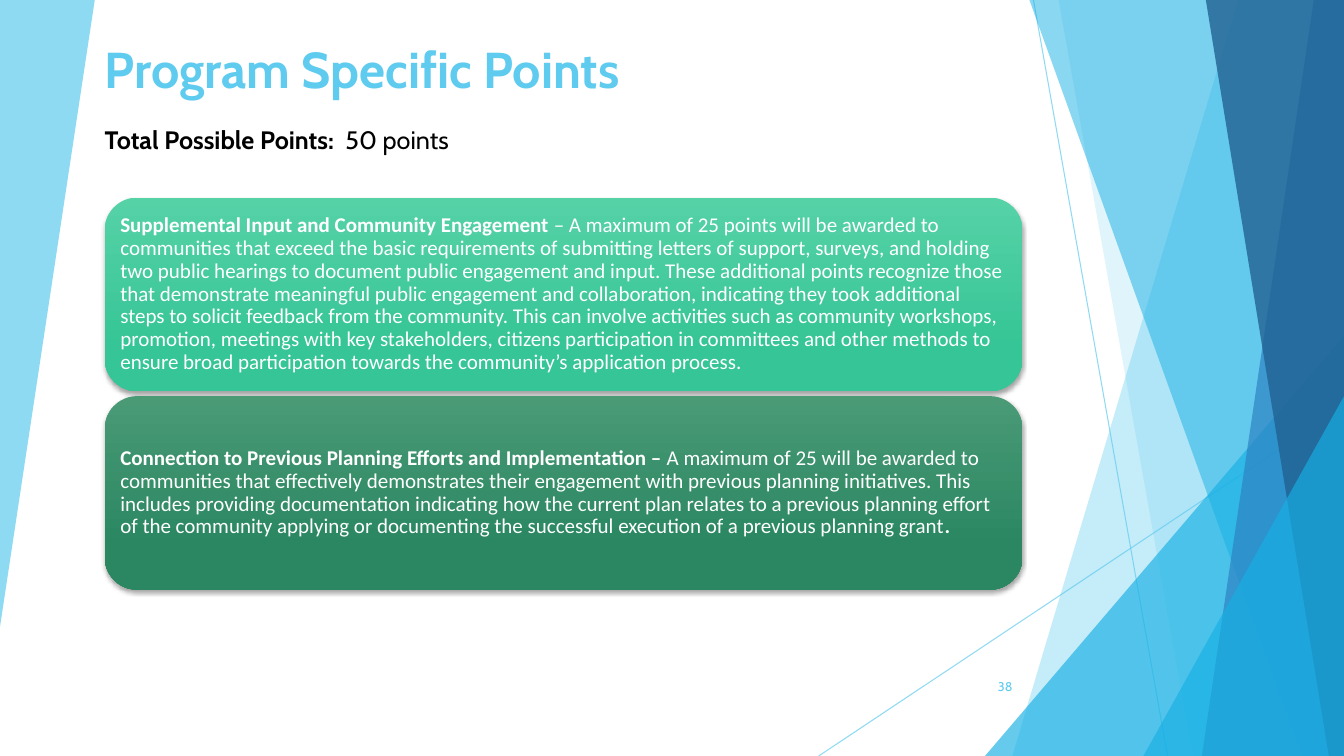
from dataclasses import dataclass

from lxml.etree import SubElement
from pptx import Presentation
from pptx.dml.color import RGBColor
from pptx.enum.shapes import MSO_CONNECTOR, MSO_SHAPE
from pptx.enum.text import MSO_ANCHOR, PP_ALIGN
from pptx.oxml.ns import qn
from pptx.util import Inches, Pt

WIDTH, HEIGHT = 13.33, 7.5


@dataclass(frozen=True)
class Theme:
    sky: str = "5FCBEF"
    azure: str = "17B0E4"
    blue: str = "2E83C3"
    navy: str = "226292"
    black: str = "000000"
    white: str = "FFFFFF"
    heading_font: str = "Cabin"
    body_font: str = "Calibri"
    title_size: float = 36
    subtitle_size: float = 18
    body_size: float = 15
    number_size: float = 9


@dataclass(frozen=True)
class Facet:
    points: tuple[tuple[float, float], ...]
    color: str
    opacity: int


@dataclass(frozen=True)
class Corner:
    """Right triangle in the lower right corner of the slide."""
    left: float
    top: float
    color: str
    opacity: int


@dataclass(frozen=True)
class Ray:
    start: tuple[float, float]
    end: tuple[float, float]
    color: str
    opacity: int


@dataclass(frozen=True)
class Span:
    text: str
    bold: bool = False


@dataclass(frozen=True)
class Card:
    colors: tuple[str, str]
    spans: tuple[Span, ...]


THEME = Theme()


def right_facet(top_left: float, bottom_left: float, color: str, opacity: int) -> Facet:
    """Facet reaching from a slanted left edge to the right slide edge."""
    points = ((top_left, 0), (WIDTH, 0), (WIDTH, HEIGHT), (bottom_left, HEIGHT))
    return Facet(points, color, opacity)


# Background decoration, from back to front
DECORATION = (
    Facet(((0, 0), (0.94, 0), (0, 6.22)), THEME.sky, 70),
    Ray((10.25, 0), (11.58, HEIGHT), THEME.sky, 70),
    Ray((WIDTH, 4.03), (8.12, HEIGHT), THEME.sky, 70),
    right_facet(12.28, 10.04, THEME.sky, 36),
    right_facet(10.5, 11.83, THEME.sky, 20),
    Corner(9.77, 3.33, THEME.azure, 66),
    right_facet(10.21, 12.91, THEME.azure, 50),
    right_facet(13.03, 11.92, THEME.blue, 70),
    right_facet(11.96, 13.18, THEME.navy, 80),
    Corner(11.34, 3.93, THEME.azure, 66),
)

CARDS = (
    Card(("56D2A7", "36C596"), (
        Span("Supplemental Input and Community Engagement", True),
        Span(" – A maximum of 25 points will be awarded to communities that exceed the basic "
             "requirements of submitting letters of support, surveys, and holding two public "
             "hearings to document public engagement and input. These additional points "
             "recognize those that demonstrate meaningful public engagement and collaboration, "
             "indicating they took additional steps to solicit feedback from the community. "
             "This can involve activities such as community workshops, promotion, meetings with "
             "key stakeholders, citizens participation in committees and other methods to ensure "
             "broad participation towards the community’s application process."),
    )),
    Card(("4A9A76", "2A8762"), (
        Span("Connection to Previous Planning Efforts and Implementation –", True),
        Span(" A maximum of 25 will be awarded to communities that effectively demonstrates "
             "their engagement with previous planning initiatives. This includes providing "
             "documentation indicating how the current plan relates to a previous planning "
             "effort of the community applying or documenting the successful execution of a "
             "previous planning grant"),
        Span(".", True),
    )),
)


def set_opacity(shape, opacity: int) -> None:
    for color in shape.element.spPr.iter(qn("a:srgbClr")):
        SubElement(color, qn("a:alpha")).set("val", str(opacity * 1000))


def paint(shape, color: str, opacity: int) -> None:
    shape.shadow.inherit = False
    shape.fill.solid()
    shape.fill.fore_color.rgb = RGBColor.from_string(color)
    shape.line.fill.background()
    set_opacity(shape, opacity)


def draw_decoration(slide, part: Facet | Corner | Ray) -> None:
    if isinstance(part, Ray):
        ends = [Inches(value) for value in part.start + part.end]
        connector = slide.shapes.add_connector(MSO_CONNECTOR.STRAIGHT, *ends)
        connector.line.color.rgb = RGBColor.from_string(part.color)
        connector.line.width = Pt(0.75)
        set_opacity(connector, part.opacity)
        SubElement(connector.element.spPr, qn("a:effectLst"))
        return
    if isinstance(part, Corner):
        shape = slide.shapes.add_shape(
            MSO_SHAPE.ISOSCELES_TRIANGLE, Inches(part.left), Inches(part.top),
            Inches(WIDTH - part.left), Inches(HEIGHT - part.top))
        shape.adjustments[0] = 1
    else:
        points = [(Inches(x), Inches(y)) for x, y in part.points]
        builder = slide.shapes.build_freeform(*points[0])
        builder.add_line_segments(points[1:], close=True)
        shape = builder.convert_to_shape()
    paint(shape, part.color, part.opacity)


def add_run(paragraph, text: str, font_name: str, size: float, color: str,
            bold: bool = False) -> None:
    run = paragraph.add_run()
    run.text = text
    run.font.name = font_name
    run.font.size = Pt(size)
    run.font.bold = bold
    run.font.color.rgb = RGBColor.from_string(color)


def add_text_frame(slide, left: float, top: float, width: float, height: float):
    box = slide.shapes.add_textbox(Inches(left), Inches(top), Inches(width), Inches(height))
    box.text_frame.word_wrap = True
    return box.text_frame


def draw_card(slide, card: Card, top: float) -> None:
    shape = slide.shapes.add_shape(
        MSO_SHAPE.ROUNDED_RECTANGLE, Inches(1.04), Inches(top), Inches(9.1), Inches(1.92))
    shape.line.fill.background()
    shape.fill.gradient()
    shape.fill.gradient_angle = 270
    for stop, color, position in zip(shape.fill.gradient_stops, card.colors, (0, 0.78)):
        stop.color.rgb = RGBColor.from_string(color)
        stop.position = position

    # Soft shadow below the card
    shape.shadow.inherit = False
    effects = shape.element.spPr.find(qn("a:effectLst"))
    shadow = SubElement(effects, qn("a:outerShdw"), blurRad=str(Pt(3)), dist=str(Pt(2)),
                        dir="5400000", rotWithShape="0")
    shadow_color = SubElement(shadow, qn("a:srgbClr"), val=THEME.black)
    SubElement(shadow_color, qn("a:alpha"), val="35000")

    frame = shape.text_frame
    frame.word_wrap = True
    frame.vertical_anchor = MSO_ANCHOR.MIDDLE
    frame.margin_left = frame.margin_right = Inches(0.06)
    frame.margin_top = frame.margin_bottom = Inches(0.06)
    paragraph = frame.paragraphs[0]
    paragraph.alignment = PP_ALIGN.LEFT
    paragraph.line_spacing = 0.9
    for span in card.spans:
        add_run(paragraph, span.text, THEME.body_font, THEME.body_size, THEME.white, span.bold)


def main() -> None:
    presentation = Presentation()
    presentation.slide_width, presentation.slide_height = Inches(WIDTH), Inches(HEIGHT)
    slide = presentation.slides.add_slide(presentation.slide_layouts[6])

    for part in DECORATION:
        draw_decoration(slide, part)

    # Title and total
    title = add_text_frame(slide, 0.94, 0.33, 6.41, 1.41).paragraphs[0]
    font = THEME.heading_font
    add_run(title, "Program Specific Points", font, THEME.title_size, THEME.sky, True)
    title.add_line_break()
    add_run(title, "Total Possible Points:", font, THEME.subtitle_size, THEME.black, True)
    add_run(title, " ", font, THEME.title_size, THEME.black)
    add_run(title, "50 points", font, THEME.subtitle_size, THEME.black)

    # Slide number
    number_frame = add_text_frame(slide, 9.39, 6.61, 0.75, 0.4)
    number_frame.vertical_anchor = MSO_ANCHOR.MIDDLE
    number = number_frame.paragraphs[0]
    number.alignment = PP_ALIGN.RIGHT
    add_run(number, "38", font, THEME.number_size, THEME.sky)

    # Cards
    for index, card in enumerate(CARDS):
        draw_card(slide, card, 1.96 + index * 1.97)

    presentation.save("out.pptx")


if __name__ == "__main__":
    main()
